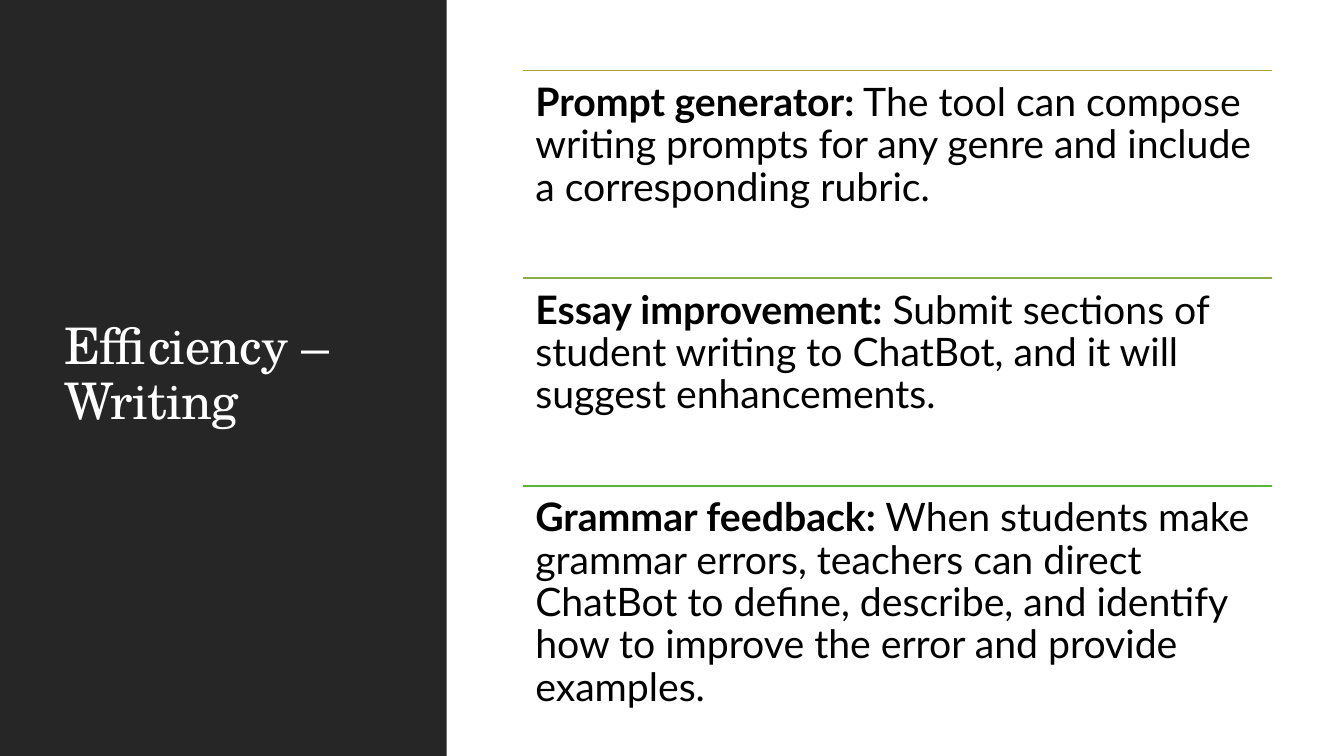
import pptx
import pptx.util
import pptx.dml.color
import pptx.enum.shapes
import pptx.enum.text
import pptx.oxml.ns
import lxml.etree

Inches = pptx.util.Inches
RGBColor = pptx.dml.color.RGBColor
Anchor = pptx.enum.text.MSO_ANCHOR

DARK = RGBColor(0x26, 0x26, 0x26)
WHITE = RGBColor(0xFF, 0xFF, 0xFF)
BLACK = RGBColor(0x00, 0x00, 0x00)
GOLD = RGBColor(0xAE, 0xA3, 0x3A)
OLIVE = RGBColor(0x8C, 0xAB, 0x4A)
GREEN = RGBColor(0x57, 0xB6, 0x36)

LEFT, TOP, WIDTH, STEP = 5.19, 0.7, 7.43, 2.06
ITEMS = [
    (GOLD, "Prompt generator:",
     " The tool can compose writing prompts for any genre and include "
     "a corresponding rubric."),
    (OLIVE, "Essay improvement:",
     " Submit sections of student writing to ChatBot, and it will "
     "suggest enhancements."),
    (GREEN, "Grammar feedback:",
     " When students make grammar errors, teachers can direct ChatBot "
     "to define, describe, and identify how to improve the error and "
     "provide examples."),
]


def add_text(slide, box, parts, font, size, color,
             inset=(0.1, 0.05), anchor=Anchor.TOP, space=0):
    frame = slide.shapes.add_textbox(*map(Inches, box)).text_frame
    frame.word_wrap = True
    frame.vertical_anchor = anchor
    frame.margin_left = frame.margin_right = Inches(inset[0])
    frame.margin_top = frame.margin_bottom = Inches(inset[1])
    para = frame.paragraphs[0]
    para.line_spacing = 0.9
    for text, bold in parts:
        run = para.add_run()
        run.text = text
        run.font.name = font
        run.font.size = pptx.util.Pt(size)
        run.font.bold = bold
        run.font.color.rgb = color
        if space:
            run._r.get_or_add_rPr().set("spc", str(int(space * 100)))


def add_panel(slide, box, color):
    panel = slide.shapes.add_shape(
        pptx.enum.shapes.MSO_SHAPE.RECTANGLE, *map(Inches, box))
    panel.shadow.inherit = False
    panel.fill.solid()
    panel.fill.fore_color.rgb = color
    panel.line.fill.background()


def add_rule(slide, left, top, width, color):
    rule = slide.shapes.add_connector(
        pptx.enum.shapes.MSO_CONNECTOR.STRAIGHT,
        Inches(left), Inches(top), Inches(left + width), Inches(top))
    rule.line.color.rgb = color
    rule.line.width = pptx.util.Pt(1.25)
    lxml.etree.SubElement(
        rule._element.spPr, pptx.oxml.ns.qn("a:effectLst"))


def main():
    deck = pptx.Presentation()
    deck.slide_width = Inches(13.33)
    deck.slide_height = Inches(7.5)
    slide = deck.slides.add_slide(deck.slide_layouts[6])

    add_panel(slide, (0, 0, 4.43, 7.5), DARK)
    add_text(slide, (0.54, 0.57, 3.37, 6.31),
             [("Efficiency – Writing", False)], "TeX Gyre Schola", 36,
             WHITE, anchor=Anchor.MIDDLE, space=-0.5)

    for row, (color, label, detail) in enumerate(ITEMS):
        top = TOP + row * STEP
        add_rule(slide, LEFT, top, WIDTH, color)
        add_text(slide, (LEFT, top, WIDTH, STEP),
                 [(label, True), (detail, False)], "Lato", 28, BLACK,
                 inset=(0.12, 0.12))

    deck.save("out.pptx")


if __name__ == "__main__":
    main()
